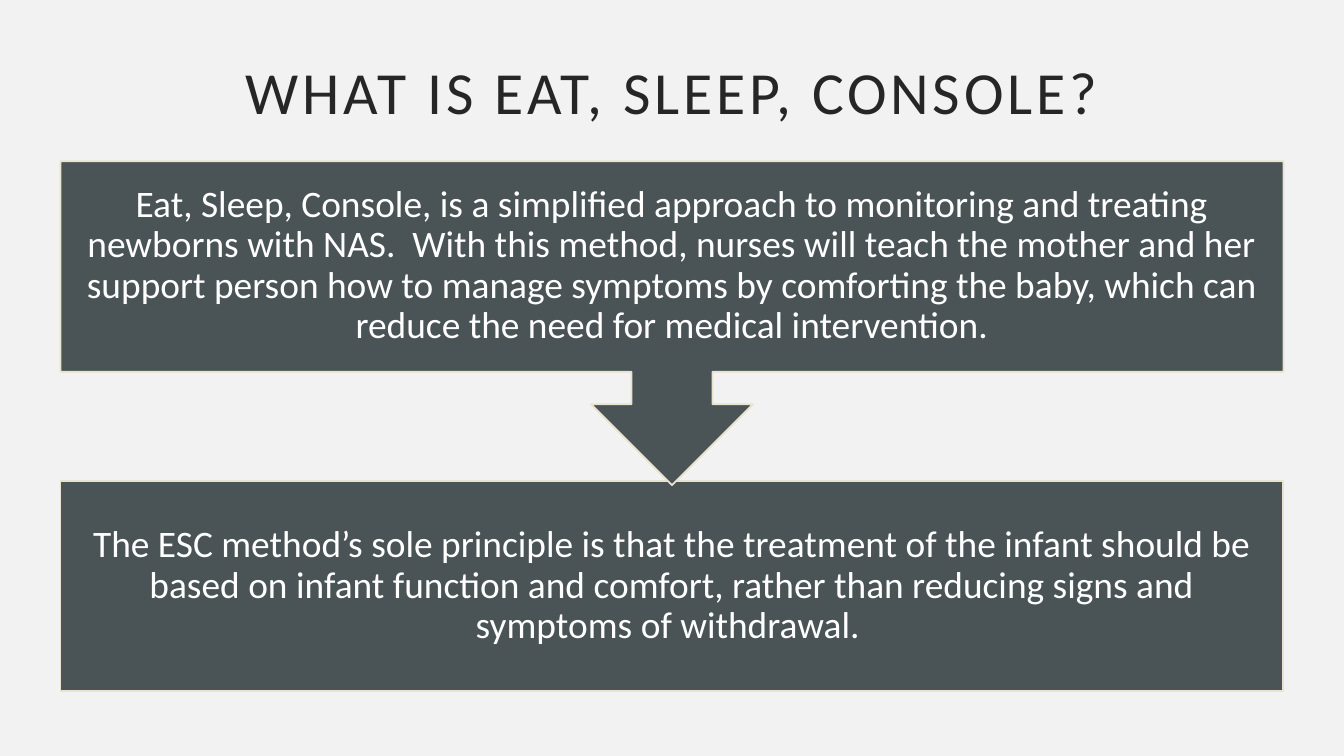
"""Build the slide that explains the Eat, Sleep, Console method."""
from pptx import Presentation
from pptx.dml.color import RGBColor
from pptx.enum.shapes import MSO_SHAPE
from pptx.enum.text import MSO_ANCHOR, PP_ALIGN
from pptx.util import Inches, Pt

RECT = MSO_SHAPE.RECTANGLE
CALLOUT = MSO_SHAPE.UP_ARROW_CALLOUT
MIDDLE = MSO_ANCHOR.MIDDLE
CENTER = PP_ALIGN.CENTER
PALE = RGBColor(0xF2, 0xF2, 0xF2)
INK = RGBColor(0x26, 0x26, 0x26)
SLATE = RGBColor(0x4A, 0x53, 0x56)
CREAM = RGBColor(0xE8, 0xE3, 0xCE)
WHITE = RGBColor(0xFF, 0xFF, 0xFF)

LEFT, WIDTH, BOX = 0.45, 9.1, 1.56

deck = Presentation()
deck.slide_width = Inches(10)
deck.slide_height = Inches(10) * 9 // 16
slide = deck.slides.add_slide(deck.slide_layouts[6])
slide.background.fill.solid()
slide.background.fill.fore_color.rgb = PALE


def write(area, text, size, color, inset, after):
    box = slide.shapes.add_textbox(*map(Inches, area))
    frame = box.text_frame
    margins = {f"margin_{side}": Inches(inset) for side in ("left", "top", "right", "bottom")}
    para = frame.paragraphs[0]
    run = para.add_run()
    formats = [
        (frame, {"word_wrap": True, "vertical_anchor": MIDDLE, **margins}),
        (para, {"alignment": CENTER, "line_spacing": 0.9, "space_after": Pt(after)}),
        (run, {"text": text}),
        (run.font, {"name": "Calibri", "size": Pt(size)}),
        (run.font.color, {"rgb": color}),
    ]
    for target, values in formats:
        for name, value in values.items():
            setattr(target, name, value)
    return run


title = write((1.14, 0.22, 7.72, 0.97), "WHAT IS EAT, SLEEP, CONSOLE?", 32, INK, 0.2, 6)
title.font._element.set("spc", "200")

steps = [
    (RECT, 3.58, BOX, 0,
     "The ESC method’s sole principle is that the treatment of the infant should be "
     "based on infant function and comfort, rather than reducing signs and "
     "symptoms of withdrawal. "),
    (CALLOUT, 1.2, 2.41, 180,
     "Eat, Sleep, Console, is a simplified approach to monitoring and treating "
     "newborns with NAS.  With this method, nurses will teach the mother and her "
     "support person how to manage symptoms by comforting the baby, which can "
     "reduce the need for medical intervention."),
]
for kind, top, height, turn, text in steps:
    panel = slide.shapes.add_shape(kind, *map(Inches, (LEFT, top, WIDTH, height)))
    panel.rotation = turn
    panel.shadow.inherit = False
    panel.fill.solid()
    panel.fill.fore_color.rgb = SLATE
    panel.line.color.rgb = CREAM
    panel.line.width = Pt(1)
    write((LEFT, top, WIDTH, BOX), text, 20, WHITE, 0.16, 7)

deck.save("out.pptx")
